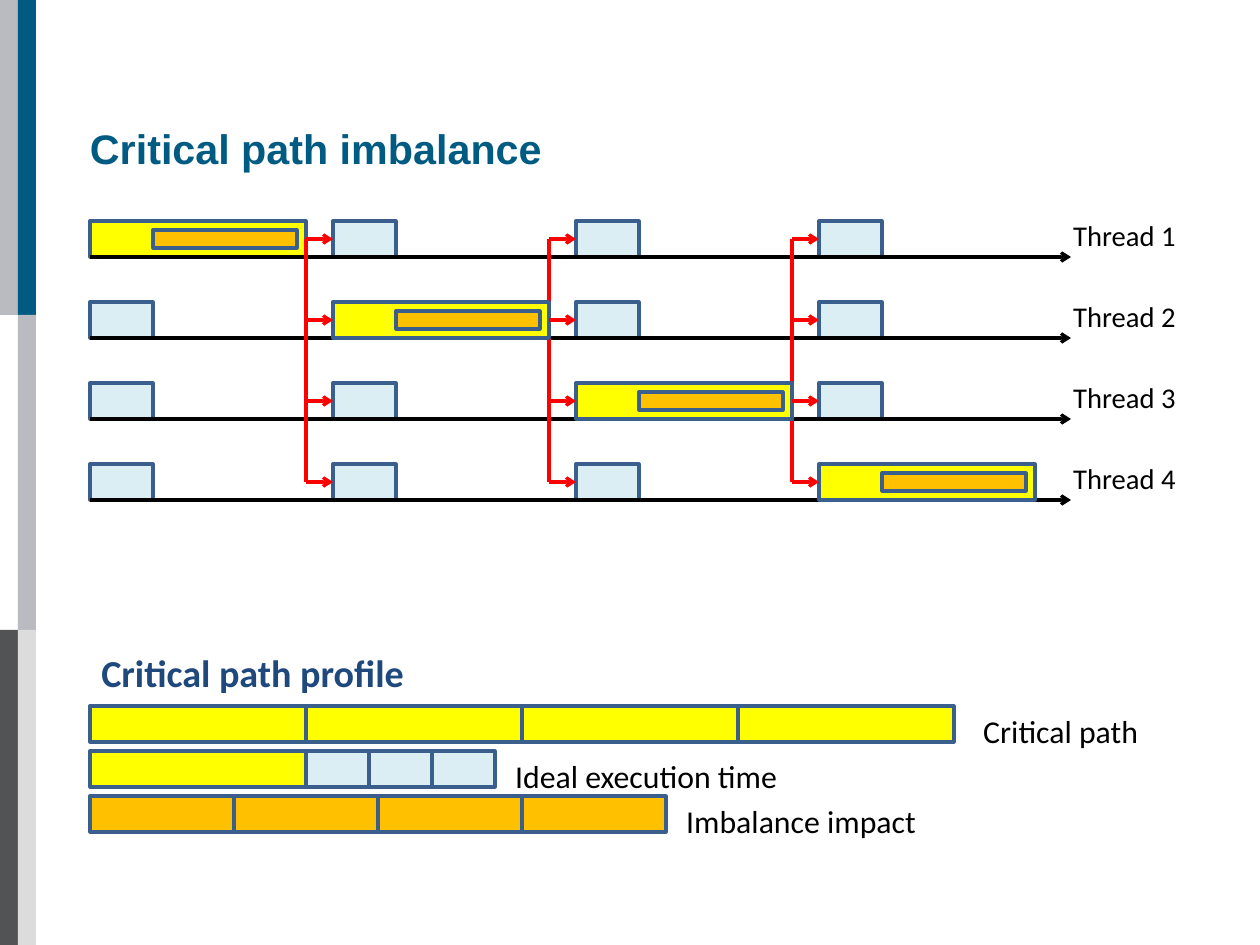
import pptx
import pptx.util
import pptx.dml.color
import pptx.enum.shapes
import pptx.enum.text
import pptx.oxml.ns
import lxml.etree

PX = 8000  # EMU per px
COLORS = {
    "teal": "005B82", "silver": "B9BBC0", "slate": "515355", "pale": "DCDCDC",
    "critical": "FFFF00", "ideal": "DBEEF4", "imbalance": "FFC000",
    "border": "3A5F8C", "axis": "000000", "sync": "FF0000",
    "text": "000000", "heading": "1F497D",
}
RGB = {name: pptx.dml.color.RGBColor.from_string(h) for name, h in COLORS.items()}

prs = pptx.Presentation()
prs.slide_width, prs.slide_height = 1260 * PX, 945 * PX
s = prs.slides.add_slide(prs.slide_layouts[6])


def add_box(x, y, w, h, fill, border="border"):
    sp = s.shapes.add_shape(pptx.enum.shapes.MSO_SHAPE.RECTANGLE,
                            x * PX, y * PX, w * PX, h * PX)
    sp.shadow.inherit = False
    sp.fill.solid()
    sp.fill.fore_color.rgb = RGB[fill]
    if border:
        sp.line.color.rgb = RGB[border]
        sp.line.width = pptx.util.Pt(2)
    else:
        sp.line.fill.background()
    return sp


def add_line(x1, y1, x2, y2, color, arrow=True):
    c = s.shapes.add_connector(pptx.enum.shapes.MSO_CONNECTOR.STRAIGHT,
                               x1 * PX, y1 * PX, x2 * PX, y2 * PX)
    c.line.color.rgb = RGB[color]
    c.line.width = pptx.util.Pt(2)
    qn = pptx.oxml.ns.qn
    if arrow:
        lxml.etree.SubElement(c.line._get_or_add_ln(), qn("a:tailEnd"), type="arrow")
    lxml.etree.SubElement(c._element.spPr, qn("a:effectLst"))
    return c


# Side bands
BAND_W, BAND_H = 18, 315
for col, row, color in [(0, 0, "silver"), (1, 0, "teal"), (1, 1, "silver"),
                        (0, 2, "slate"), (1, 2, "pale")]:
    add_box(col * BAND_W, row * BAND_H, BAND_W, BAND_H, color, None)

# Thread timelines: in phase n, thread n is the slow one
LEFT, TOP, PHASE_STEP, THREAD_STEP = 90, 221, 243, 81
LONG, SHORT, EXTRA, BAR_H = 216, 63, 144, 36
N = 4
phase_x = [LEFT + i * PHASE_STEP for i in range(N)]
thread_y = [TOP + i * THREAD_STEP for i in range(N)]
mid_y = [y + BAR_H // 2 for y in thread_y]

tasks = {}
for phase, x in enumerate(phase_x):
    for thread, y in enumerate(thread_y):
        if phase != thread:
            tasks[phase, thread] = add_box(x, y, SHORT, BAR_H, "ideal")
tasks[0, 0] = add_box(LEFT, TOP, LONG, BAR_H, "critical")

for y in thread_y:
    add_line(LEFT, y + BAR_H, 1071, y + BAR_H, "axis")
for x in phase_x[:-1]:
    add_line(x + LONG, mid_y[0], x + LONG, mid_y[-1], "sync", arrow=False)
for i in range(1, N):
    tasks[i, i] = add_box(phase_x[i], thread_y[i], LONG, BAR_H, "critical")
for x, y in zip(phase_x, thread_y):
    add_box(x + SHORT, y + 9, EXTRA, BAR_H // 2, "imbalance")

for phase in range(N - 1):
    for thread, y in enumerate(mid_y):
        c = add_line(phase_x[phase] + LONG, y, phase_x[phase + 1], y, "sync")
        if phase == thread:
            c.begin_connect(tasks[phase, thread], 3)
        c.end_connect(tasks[phase + 1, thread], 1)

# Critical path profile
PROFILE_Y, PROFILE_STEP = 706, 45
profile = [
    [("critical", LONG)] * N,
    [("critical", LONG)] + [("ideal", SHORT)] * (N - 1),
    [("imbalance", EXTRA)] * N,
]
for i, segments in enumerate(profile):
    x = LEFT
    for color, w in segments:
        add_box(x, PROFILE_Y + i * PROFILE_STEP, w, BAR_H, color)
        x += w

# Labels: text, x, y, w, h, size, color
labels = [(f"Thread {i + 1}", 1062, y - 9, 127, 46, 18, "text")
          for i, y in enumerate(thread_y)]
labels += [(text, x, PROFILE_Y + i * PROFILE_STEP, w, 50, 20, "text")
           for i, (text, x, w) in enumerate([("Critical path", 972, 180),
                                             ("Ideal execution time", 504, 288),
                                             ("Imbalance impact", 675, 288)])]
labels += [("Critical path profile", 90, 644, 329, 57, 24, "heading"),
           ("Critical path imbalance", 90, 81, 1134, 135, 26, "teal")]
for text, x, y, w, h, size, color in labels:
    is_title = color == "teal"
    tf = s.shapes.add_textbox(x * PX, y * PX, w * PX, h * PX).text_frame
    tf.word_wrap = is_title
    if is_title:
        tf.margin_left = tf.margin_right = tf.margin_top = tf.margin_bottom = 0
        tf.vertical_anchor = pptx.enum.text.MSO_ANCHOR.MIDDLE
    r = tf.paragraphs[0].add_run()
    r.text = text
    r.font.name = "Arial" if is_title else "Calibri"
    r.font.size = pptx.util.Pt(size)
    r.font.bold = color != "text"
    r.font.color.rgb = RGB[color]

prs.save("out.pptx")
